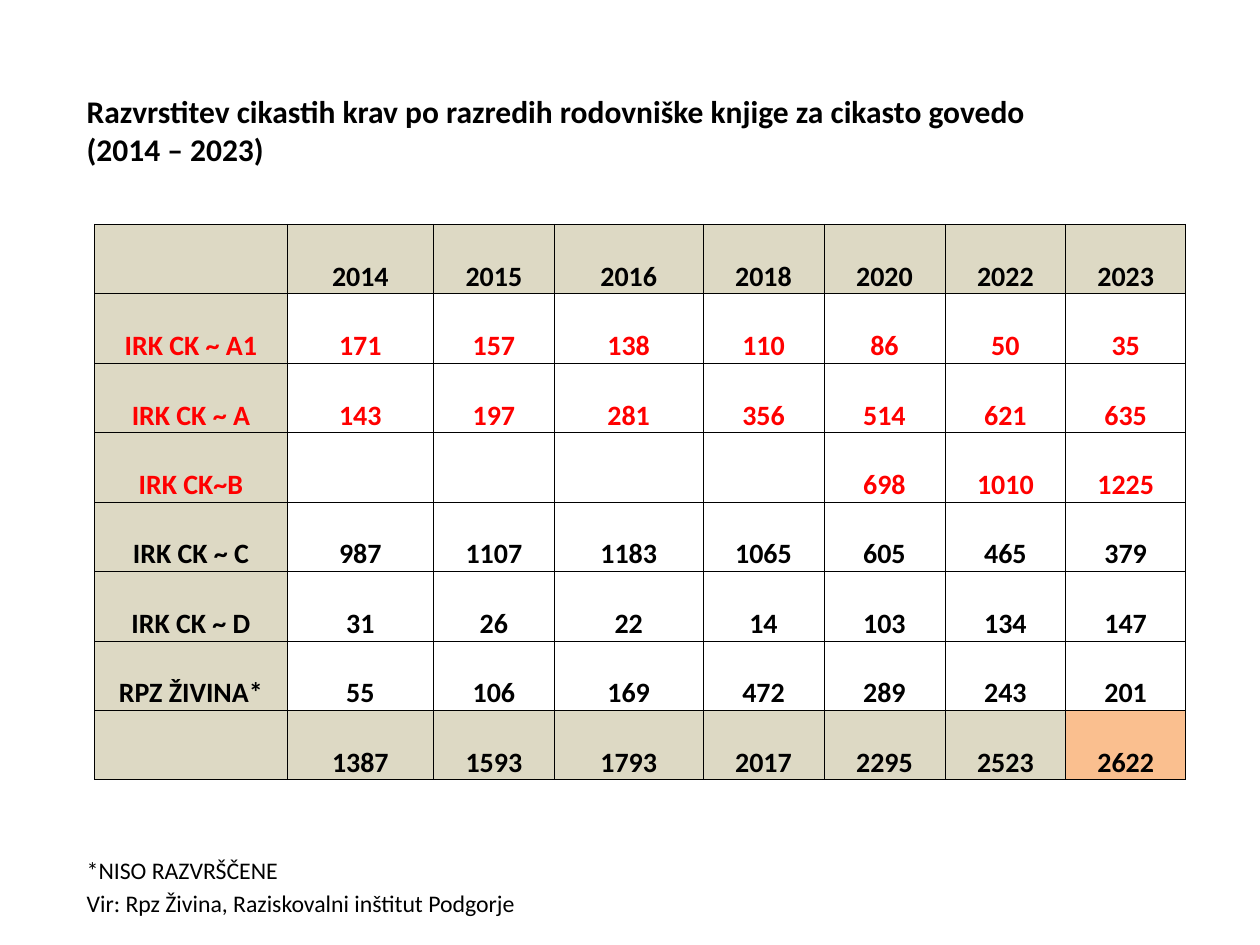
from lxml.etree import SubElement
from pptx import Presentation
from pptx.dml.color import RGBColor
from pptx.enum.text import MSO_ANCHOR as Anchor, MSO_AUTO_SIZE as AutoSize, PP_ALIGN as Align
from pptx.oxml.ns import qn
from pptx.util import Inches, Pt

BLACK, RED = "000000", "FF0000"
BEIGE, ORANGE = "DDD9C4", "FABF8F"


def color(value):
    return RGBColor.from_string(value)


def add_text(para, text, size, bold, ink=BLACK):
    span = para.add_run()
    span.text = text
    span.font.name = "Calibri"
    span.font.size = Pt(size)
    span.font.bold = bold
    span.font.color.rgb = color(ink)


deck = Presentation()
deck.slide_width, deck.slide_height = Inches(10), Inches(7.5)
page = deck.slides.add_slide(deck.slide_layouts[6])

# Title and footnotes: top, height, size, bold, space before, lines
text_blocks = [
    (0.68, 0.71, 18, True, 0, [
        "Razvrstitev cikastih krav po razredih rodovniške knjige za cikasto govedo",
        "(2014 – 2023)"]),
    (6.74, 0.55, 13.6, False, 2.7, [
        "*NISO RAZVRŠČENE",
        "Vir: Rpz Živina, Raziskovalni inštitut Podgorje"]),
]
for top, height, size, bold, gap, lines in text_blocks:
    box = page.shapes.add_textbox(Inches(0.59), Inches(top), Inches(8.5), Inches(height))
    frame = box.text_frame
    frame.word_wrap = True
    frame.auto_size = AutoSize.NONE
    for index, line in enumerate(lines):
        para = frame.paragraphs[0] if index == 0 else frame.add_paragraph()
        para.space_before = Pt(gap)
        add_text(para, line, size, bold)

# Table of cows by herd book class and year
rows = [
    ["", "2014", "2015", "2016", "2018", "2020", "2022", "2023"],
    ["IRK CK ~ A1", "171", "157", "138", "110", "86", "50", "35"],
    ["IRK CK ~ A", "143", "197", "281", "356", "514", "621", "635"],
    ["IRK CK~B", "", "", "", "", "698", "1010", "1225"],
    ["IRK CK ~ C", "987", "1107", "1183", "1065", "605", "465", "379"],
    ["IRK CK ~ D", "31", "26", "22", "14", "103", "134", "147"],
    ["RPZ ŽIVINA*", "55", "106", "169", "472", "289", "243", "201"],
    ["", "1387", "1593", "1793", "2017", "2295", "2523", "2622"],
]
widths = [1.53, 1.16, 0.96, 1.18, 0.96, 0.96, 0.96, 0.95]
last_row, last_column = len(rows) - 1, len(widths) - 1
red_rows = (1, 2, 3)

table = page.shapes.add_table(len(rows), len(widths), Inches(0.75), Inches(1.78),
                              Inches(8.66), Inches(4.41)).table
table.horz_banding = False
for column, width in zip(table.columns, widths):
    column.width = Inches(width)

for r, values in enumerate(rows):
    for c, value in enumerate(values):
        cell = table.cell(r, c)
        cell.vertical_anchor = Anchor.BOTTOM
        cell.margin_left = cell.margin_right = cell.margin_top = cell.margin_bottom = 0

        # Thin black borders come before the fill in the cell properties
        properties = cell._tc.get_or_add_tcPr()
        for side in ("a:lnL", "a:lnR", "a:lnT", "a:lnB"):
            border = SubElement(properties, qn(side), w=str(Pt(0.5)))
            SubElement(SubElement(border, qn("a:solidFill")), qn("a:srgbClr"), val=BLACK)

        # Header, label column and totals are shaded; the latest total stands out
        if (r, c) == (last_row, last_column):
            shade = ORANGE
        elif r in (0, last_row) or c == 0:
            shade = BEIGE
        else:
            shade = None
        if shade:
            cell.fill.solid()
            cell.fill.fore_color.rgb = color(shade)
        else:
            cell.fill.background()

        if value:
            para = cell.text_frame.paragraphs[0]
            para.alignment = Align.CENTER
            add_text(para, value, 16, True, RED if r in red_rows else BLACK)

deck.save("out.pptx")
